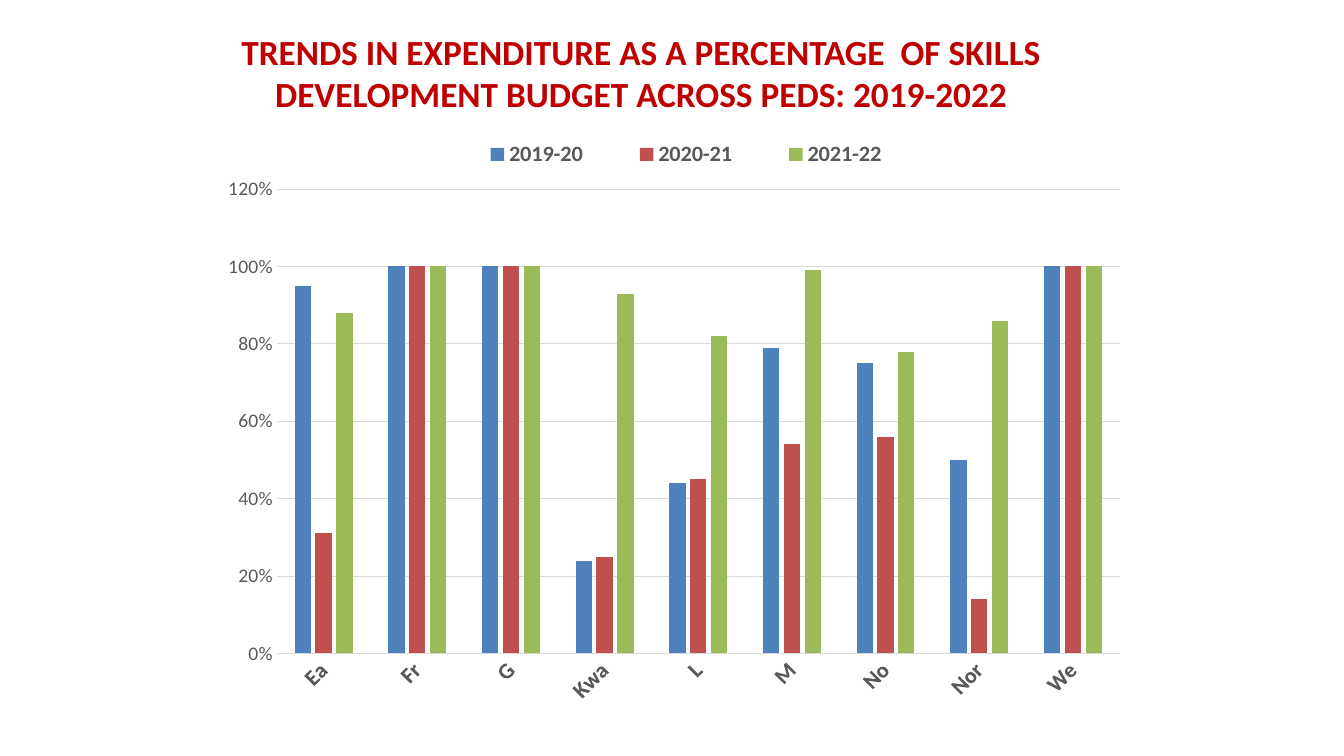
"""Build a slide with a clustered column chart of skills development spending by province."""
from dataclasses import dataclass

from lxml.etree import Element, SubElement
from pptx import Presentation
from pptx.chart.axis import CategoryAxis, ValueAxis
from pptx.chart.chart import Chart
from pptx.chart.data import CategoryChartData
from pptx.dml.color import RGBColor
from pptx.dml.line import LineFormat
from pptx.enum.chart import XL_CHART_TYPE, XL_LEGEND_POSITION, XL_TICK_MARK
from pptx.enum.text import MSO_ANCHOR, PP_ALIGN
from pptx.oxml.ns import qn
from pptx.slide import Slide
from pptx.text.text import Font
from pptx.util import Inches, Pt

SLIDE_WIDTH, SLIDE_HEIGHT = Inches(13.33), Inches(7.5)


@dataclass(frozen=True)
class Theme:
    font: str = "Calibri"
    title: str = "C00000"
    label: str = "595959"
    rule: str = "D9D9D9"
    title_size: float = 25.2
    label_size: float = 16
    scale_size: float = 14
    rule_width: float = 0.75


@dataclass(frozen=True)
class Area:
    """Shares of the slide's width and height."""
    left: float
    top: float
    width: float
    height: float

    def lengths(self) -> tuple[int, int, int, int]:
        return (int(self.left * SLIDE_WIDTH), int(self.top * SLIDE_HEIGHT),
                int(self.width * SLIDE_WIDTH), int(self.height * SLIDE_HEIGHT))


@dataclass(frozen=True)
class FinancialYear:
    name: str
    color: str
    shares: tuple[float, ...]


THEME = Theme()
TITLE = "TRENDS IN EXPENDITURE AS A PERCENTAGE  OF SKILLS DEVELOPMENT BUDGET ACROSS PEDS: 2019-2022"
TITLE_AREA = Area(1.86 / 13.33, 0.21 / 7.5, 9 / 13.33, 1.01 / 7.5)
CHART_AREA = Area(2.26 / 13.33, 1.31 / 7.5, 9 / 13.33, 5.67 / 7.5)
PLOT_SHARES = {"x": 0.054, "y": 0.102, "w": 0.929, "h": 0.83}
LEGEND_SHARES = {"x": 0.235, "y": 0.01, "w": 0.54, "h": 0.06}
PROVINCES = ("Ea", "Fr", "G", "Kwa", "L", "M", "No", "Nor", "We")
YEARS = (
    FinancialYear("2019-20", "4F81BD", (0.95, 1, 1, 0.24, 0.44, 0.79, 0.75, 0.5, 1)),
    FinancialYear("2020-21", "C0504D", (0.31, 1, 1, 0.25, 0.45, 0.54, 0.56, 0.14, 1)),
    FinancialYear("2021-22", "9BBB59", (0.88, 1, 1, 0.93, 0.82, 0.99, 0.78, 0.86, 1)),
)


def style_font(font: Font, size: float, color: str, bold: bool) -> None:
    font.name = THEME.font
    font.size = Pt(size)
    font.bold = bold
    font.color.rgb = RGBColor.from_string(color)


def style_rule(line: LineFormat) -> None:
    line.color.rgb = RGBColor.from_string(THEME.rule)
    line.width = Pt(THEME.rule_width)


def add_title(slide: Slide) -> None:
    frame = slide.shapes.add_textbox(*TITLE_AREA.lengths()).text_frame
    frame.word_wrap = True
    frame.vertical_anchor = MSO_ANCHOR.MIDDLE
    paragraph = frame.paragraphs[0]
    paragraph.alignment = PP_ALIGN.CENTER
    run = paragraph.add_run()
    run.text = TITLE
    style_font(run.font, THEME.title_size, THEME.title, True)


def place_part(part: Element, shares: dict[str, float], index: int, inner: bool) -> None:
    layout = part.find(qn("c:layout"))
    if layout is None:
        layout = SubElement(part, qn("c:layout"))
        part.insert(index, layout)
    manual = SubElement(layout, qn("c:manualLayout"))
    if inner:
        SubElement(manual, qn("c:layoutTarget")).set("val", "inner")
    for side in ("x", "y"):
        SubElement(manual, qn(f"c:{side}Mode")).set("val", "edge")
    for side, share in shares.items():
        SubElement(manual, qn(f"c:{side}")).set("val", str(share))


def style_province_axis(axis: CategoryAxis) -> None:
    axis.major_tick_mark = axis.minor_tick_mark = XL_TICK_MARK.NONE
    style_font(axis.tick_labels.font, THEME.label_size, THEME.label, True)
    style_rule(axis.format.line)
    body = axis._element.find(qn("c:txPr")).find(qn("a:bodyPr"))
    body.set("rot", "-2700000")
    body.set("vert", "horz")


def style_share_axis(axis: ValueAxis) -> None:
    axis.major_tick_mark = axis.minor_tick_mark = XL_TICK_MARK.NONE
    axis.minimum_scale, axis.maximum_scale, axis.major_unit = 0, 1.2, 0.2
    axis.tick_labels.number_format = "0%"
    axis.tick_labels.number_format_is_linked = False
    style_font(axis.tick_labels.font, THEME.scale_size, THEME.label, False)
    axis.format.line.fill.background()
    style_rule(axis.major_gridlines.format.line)


def style_legend(chart: Chart) -> None:
    chart.has_legend = True
    chart.legend.position = XL_LEGEND_POSITION.TOP
    chart.legend.include_in_layout = False
    style_font(chart.legend.font, THEME.label_size, THEME.label, True)
    place_part(chart.legend._element, LEGEND_SHARES, 1, False)


def add_spending_chart(slide: Slide) -> None:
    spending = CategoryChartData(number_format="0%")
    spending.categories = PROVINCES
    for year in YEARS:
        spending.add_series(year.name, year.shares)
    chart = slide.shapes.add_chart(
        XL_CHART_TYPE.COLUMN_CLUSTERED, *CHART_AREA.lengths(), spending).chart
    chart.has_title = False
    chart.font.name = THEME.font
    style_legend(chart)
    columns = chart.plots[0]
    columns.vary_by_categories = False
    columns.gap_width, columns.overlap = 219, -27
    for series, year in zip(columns.series, YEARS):
        series.format.fill.solid()
        series.format.fill.fore_color.rgb = RGBColor.from_string(year.color)
    style_province_axis(chart.category_axis)
    style_share_axis(chart.value_axis)
    place_part(columns._element.getparent(), PLOT_SHARES, 0, True)


def main() -> None:
    presentation = Presentation()
    presentation.slide_width, presentation.slide_height = SLIDE_WIDTH, SLIDE_HEIGHT
    slide = presentation.slides.add_slide(presentation.slide_layouts[6])
    add_title(slide)
    add_spending_chart(slide)
    presentation.save("out.pptx")


if __name__ == "__main__":
    main()
